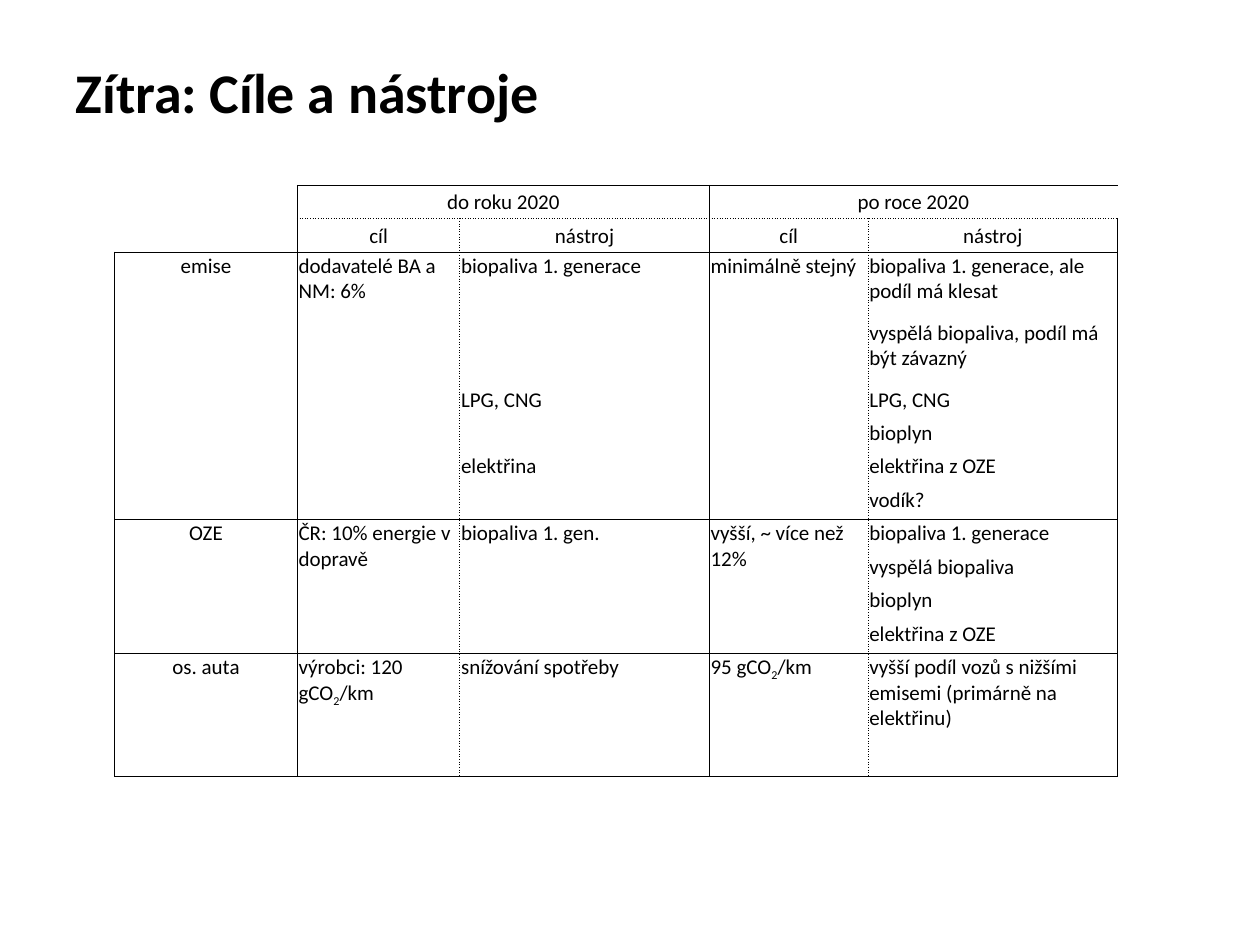
from lxml.etree import SubElement
from pptx import Presentation
from pptx.dml.color import RGBColor
from pptx.enum.text import MSO_ANCHOR as Anchor, PP_ALIGN as Align
from pptx.oxml.ns import qn
from pptx.util import Inches, Pt

COLORS = {"ink": "000000"}
FONT = "Calibri"

# Table grid, in inches; row heights are counted in units of one text line
TABLE_LEFT, TABLE_TOP, TABLE_HEIGHT = 0.91, 1.47, 4.7
COLUMN_WIDTHS = [1.45, 1.29, 1.98, 1.26, 1.98]
LAST_ROW_HEIGHT = 0.98
ROW_UNITS = [1, 1, 2, 2] + [1] * 8
HEADER_ROWS = 2
BLOCK_STARTS = [2, 8, 12, 13]  # horizontal rules of the body
MERGES = [(0, 1, 0, 2), (0, 3, 0, 4)] + [
    (top, column, bottom, column)
    for top, bottom in ((2, 7), (8, 11)) for column in (0, 1, 3)]

# Text between bars is subscript
ROWS = [
    ["", "do roku 2020", "", "po roce 2020", ""],
    ["", "cíl", "nástroj", "cíl", "nástroj"],
    ["emise", "dodavatelé BA a NM: 6%", "biopaliva 1. generace",
     "minimálně stejný", "biopaliva 1. generace, ale podíl má klesat"],
    ["", "", "", "", "vyspělá biopaliva, podíl má být závazný"],
    ["", "", "LPG, CNG", "", "LPG, CNG"],
    ["", "", "", "", "bioplyn"],
    ["", "", "elektřina", "", "elektřina z OZE"],
    ["", "", "", "", "vodík?"],
    ["OZE", "ČR: 10% energie v dopravě", "biopaliva 1. gen.",
     "vyšší, ~ více než 12%", "biopaliva 1. generace"],
    ["", "", "", "", "vyspělá biopaliva"],
    ["", "", "", "", "bioplyn"],
    ["", "", "", "", "elektřina z OZE"],
    ["os. auta", "výrobci: 120 gCO|2|/km", "snížování spotřeby",
     "95 gCO|2|/km",
     "vyšší podíl vozů s nižšími emisemi (primárně na elektřinu)"],
]


def write_text(frame, text, size=12, bold=False, align=Align.LEFT):
    paragraph = frame.paragraphs[0]
    paragraph.alignment = align
    if not text:  # keeps blank cells as low as the text cells
        SubElement(paragraph._p, qn("a:endParaRPr"), sz=str(size * 100))
        return
    for index, part in enumerate(text.split("|")):
        run = paragraph.add_run()
        run.text = part
        run.font.name = FONT
        run.font.size = Pt(size)
        run.font.bold = bold
        run.font.color.rgb = RGBColor.from_string(COLORS["ink"])
        if index % 2:
            run._r.get_or_add_rPr().set("baseline", "-25000")


def vertical_dash(row, edge):
    """Dash of the rule at a column edge, or None where there is no rule."""
    if edge == 0:
        return "solid" if row >= HEADER_ROWS else None
    if edge in (2, 4):
        return "dot" if row >= 1 else None
    return "solid"


def horizontal_dash(edge, column):
    """Dash of the rule at a row edge, or None where there is no rule."""
    if edge < HEADER_ROWS:
        return ("solid", "dot")[edge] if column > 0 else None
    return "solid" if edge in BLOCK_STARTS else None


def set_borders(cell, row, column):
    dashes = {
        "a:lnL": vertical_dash(row, column),
        "a:lnR": vertical_dash(row, column + 1),
        "a:lnT": horizontal_dash(row, column),
        "a:lnB": horizontal_dash(row + 1, column),
    }
    properties = cell._tc.get_or_add_tcPr()
    for tag, dash in dashes.items():
        line = SubElement(properties, qn(tag), w=str(Pt(0.5)))
        if dash is None:
            SubElement(line, qn("a:noFill"))
            continue
        fill = SubElement(line, qn("a:solidFill"))
        SubElement(fill, qn("a:srgbClr"), val=COLORS["ink"])
        SubElement(line, qn("a:prstDash"), val=dash)


def format_cell(cell, row, column, text):
    cell.margin_left = cell.margin_right = cell.margin_top = Inches(0.01)
    cell.margin_bottom = 0
    is_header = row < HEADER_ROWS
    cell.vertical_anchor = Anchor.MIDDLE if is_header else Anchor.TOP
    centred = is_header or column == 0
    write_text(cell.text_frame, text,
               align=Align.CENTER if centred else Align.LEFT)
    set_borders(cell, row, column)
    cell.fill.background()


def add_title(slide, text):
    title = slide.shapes.title
    title.left, title.top = Inches(0.5), Inches(0.3)
    title.width, title.height = Inches(9), Inches(0.85)
    title.text_frame.vertical_anchor = Anchor.MIDDLE
    write_text(title.text_frame, text, size=32, bold=True)


def add_goal_table(slide):
    table = slide.shapes.add_table(
        len(ROWS), len(COLUMN_WIDTHS), Inches(TABLE_LEFT), Inches(TABLE_TOP),
        Inches(sum(COLUMN_WIDTHS)), Inches(TABLE_HEIGHT)).table
    table.first_row = table.horz_banding = False

    # Column widths and row heights
    for column, width in zip(table.columns, COLUMN_WIDTHS):
        column.width = Inches(width)
    unit = (TABLE_HEIGHT - LAST_ROW_HEIGHT) / sum(ROW_UNITS)
    heights = [unit * count for count in ROW_UNITS] + [LAST_ROW_HEIGHT]
    for row, height in zip(table.rows, heights):
        row.height = Inches(height)

    # Merged cells, then content
    for top, left, bottom, right in MERGES:
        table.cell(top, left).merge(table.cell(bottom, right))
    for row, texts in enumerate(ROWS):
        for column, text in enumerate(texts):
            format_cell(table.cell(row, column), row, column, text)


def main():
    presentation = Presentation()
    presentation.slide_width = Inches(10)
    presentation.slide_height = Inches(7.5)
    slide = presentation.slides.add_slide(presentation.slide_layouts[5])
    add_title(slide, "Zítra: Cíle a nástroje")
    add_goal_table(slide)
    presentation.save("out.pptx")


if __name__ == "__main__":
    main()
